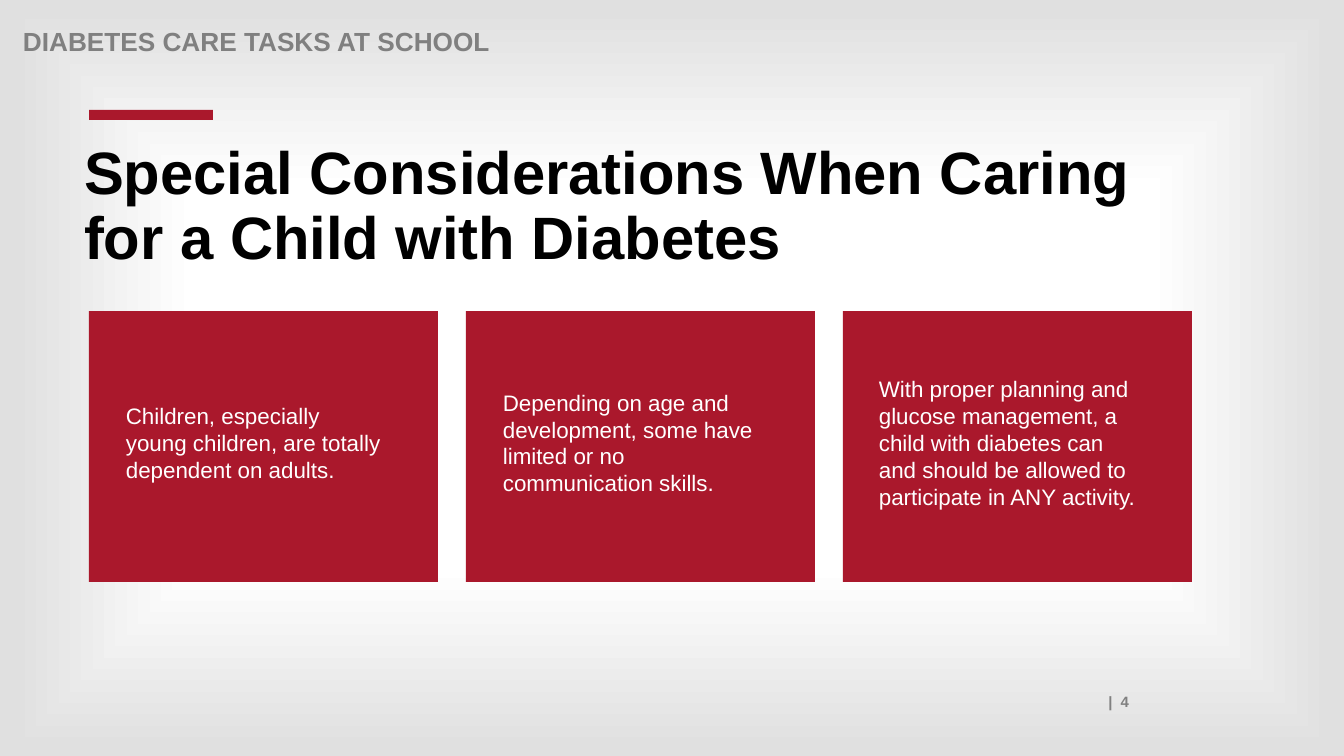
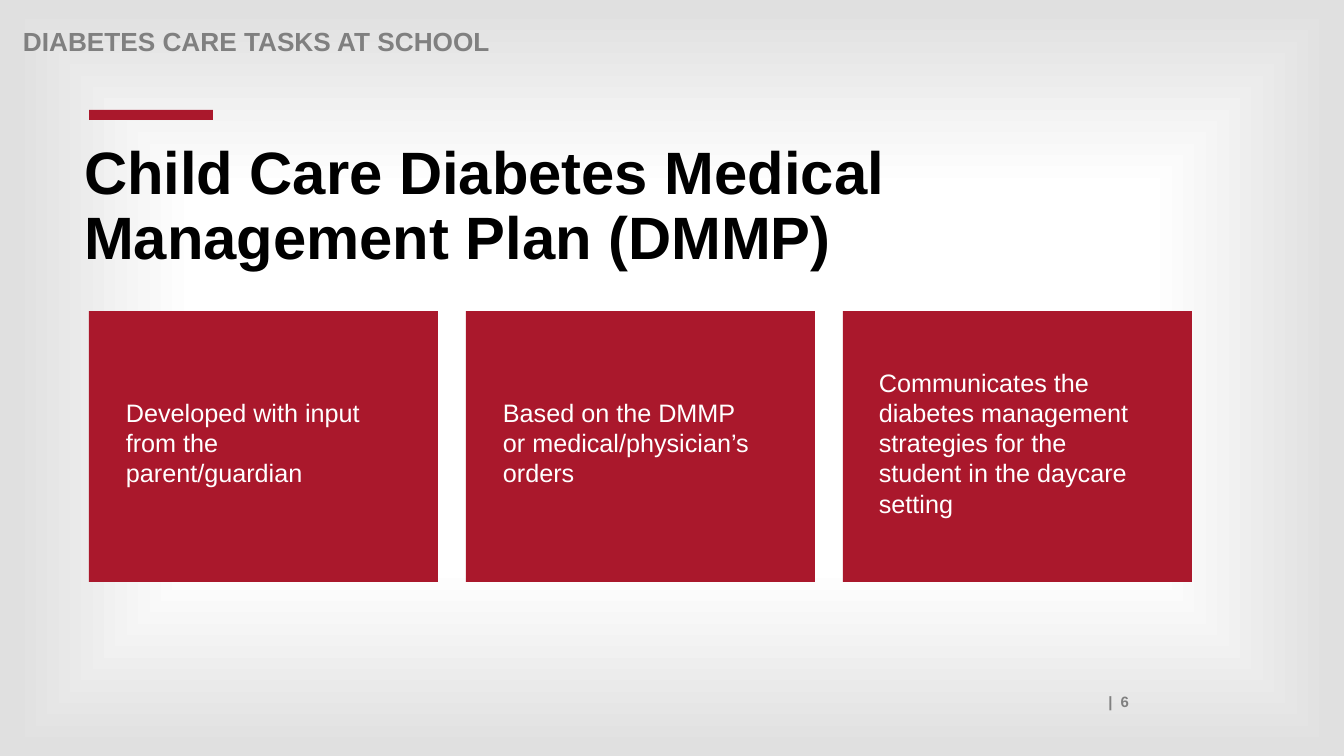
import pptx
import pptx.util
import pptx.dml.color
import pptx.enum.shapes
import pptx.enum.text
import pptx.oxml

Pt = pptx.util.Pt
RGB = pptx.dml.color.RGBColor
Align = pptx.enum.text.PP_ALIGN
Anchor = pptx.enum.text.MSO_ANCHOR

# Content
HEAD = "DIABETES CARE TASKS AT SCHOOL"
SLIDES = [
    {"title": "Special Considerations When Caring for a Child with Diabetes",
     "page": 4, "size": 16,
     "cards": [
         "Children, especially young children, are totally dependent on adults.",
         "Depending on age and development, some have limited or no communication skills.",
         "With proper planning and glucose management, a child with diabetes can "
         "and should be allowed to participate in ANY activity."]},
    {"title": "Child Care Diabetes Medical Management Plan (DMMP)",
     "page": 6, "size": 18,
     "cards": [
         "Developed with input from the parent/guardian",
         "Based on the DMMP or medical/physician’s orders",
         "Communicates the diabetes management strategies for the student "
         "in the daycare setting"]},
]

# Style
RED = RGB(0xAA, 0x18, 0x2C)
GREY = RGB(0x80, 0x80, 0x80)
BLACK = RGB(0, 0, 0)
WHITE = RGB(0xFF, 0xFF, 0xFF)
PALE = RGB(0xE0, 0xE0, 0xE0)
FONT = "Arial"
STOPS = [(12, WHITE), (50, WHITE), (98, PALE)]

# Layout in px
WIDE, HIGH = 1344, 756
HEAD_BOX = (13, 24, 1109, 28)
BAR_BOX = (89, 110, 124, 10)
TITLE_BOX = (74, 138, 1112, 131)
PAGE_BOX = (122, 688, 1017, 28)
LEFT, TOP, CARD_W, CARD_H, GAP = 89, 311, 349, 271, 28
TEXT_TOP, TEXT_H = 361, 163
INSETS = [(27, 277), (27, 277), (26, 287)]  # text offset and width per card


def px(n):
    return round(n * 914400 / 100.8)


def paint(master):
    """Give every slide the soft gradient that darkens to the edges."""
    fill = master.background.fill
    fill.gradient()
    grad = master.element.find(".//" + pptx.oxml.ns.qn("a:gradFill"))
    stops = "".join(f'<a:gs pos="{pos * 1000}"><a:srgbClr val="{tone}"/></a:gs>'
                    for pos, tone in STOPS)
    new = pptx.oxml.parse_xml(
        f'<a:gradFill {pptx.oxml.ns.nsdecls("a")} rotWithShape="1">'
        f'<a:gsLst>{stops}</a:gsLst><a:path path="shape">'
        '<a:fillToRect l="50000" t="50000" r="50000" b="50000"/>'
        '</a:path></a:gradFill>')
    grad.getparent().replace(grad, new)


def block(slide, box):
    shape = slide.shapes.add_shape(
        pptx.enum.shapes.MSO_SHAPE.RECTANGLE, *map(px, box))
    shape.shadow.inherit = False
    shape.fill.solid()
    shape.fill.fore_color.rgb = RED
    shape.line.fill.background()


def write(shape, text, size, tone, bold=False, align=Align.LEFT,
          anchor=Anchor.TOP, space=1.0):
    frame = shape.text_frame
    frame.word_wrap = True
    frame.auto_size = pptx.enum.text.MSO_AUTO_SIZE.NONE
    frame.vertical_anchor = anchor
    frame.text = text
    para = frame.paragraphs[0]
    para.alignment = align
    para.line_spacing = space
    font = para.font
    font.name, font.size, font.bold = FONT, Pt(size), bold
    font.color.rgb = tone


def label(slide, box, *args, **style):
    write(slide.shapes.add_textbox(*map(px, box)), *args, **style)


def build(deck, data):
    slide = deck.slides.add_slide(deck.slide_layouts[5])

    # Page number, header and accent bar
    label(slide, PAGE_BOX, f"|  {data['page']}", 10.7, GREY,
          bold=True, align=Align.RIGHT)
    label(slide, HEAD_BOX, HEAD, 18.7, GREY, bold=True, space=0.9)
    block(slide, BAR_BOX)

    # Title
    title = slide.shapes.title
    title.left, title.top, title.width, title.height = map(px, TITLE_BOX)
    write(title, data["title"], 42.7, BLACK, bold=True, space=0.9)

    # Cards
    for i, (text, (inset, width)) in enumerate(zip(data["cards"], INSETS)):
        x = LEFT + i * (CARD_W + GAP)
        block(slide, (x, TOP, CARD_W, CARD_H))
        label(slide, (x + inset, TEXT_TOP, width, TEXT_H), text,
              data["size"], WHITE, anchor=Anchor.MIDDLE)


def main():
    deck = pptx.Presentation()
    deck.slide_width, deck.slide_height = px(WIDE), px(HIGH)
    paint(deck.slide_master)
    for data in SLIDES:
        build(deck, data)
    deck.save("out.pptx")


if __name__ == "__main__":
    main()
